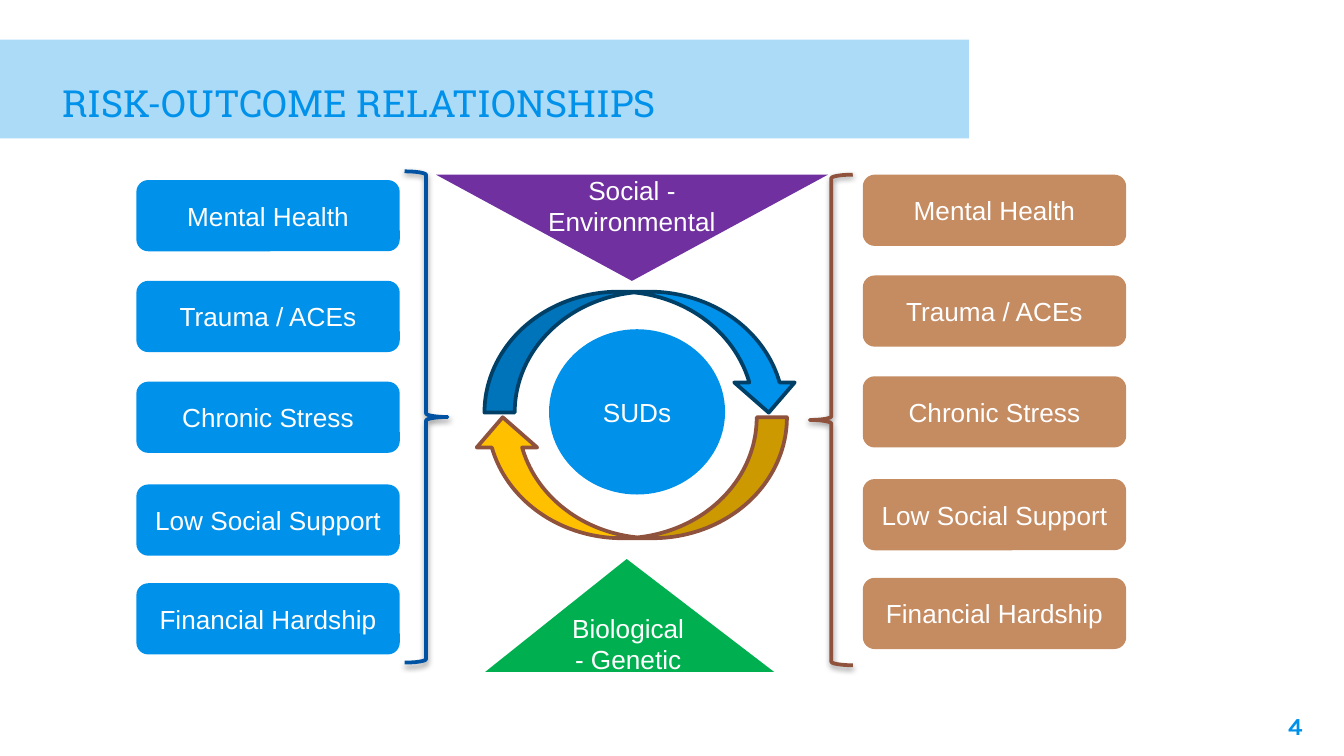
"""Build the risk-outcome relationships slide."""
from dataclasses import dataclass
from typing import Optional

from lxml import etree
from pptx import Presentation
from pptx.dml.color import RGBColor
from pptx.enum.shapes import MSO_SHAPE
from pptx.enum.text import MSO_ANCHOR, PP_ALIGN
from pptx.oxml.ns import qn
from pptx.util import Pt

RECT = MSO_SHAPE.RECTANGLE
ROUND = MSO_SHAPE.ROUNDED_RECTANGLE
OVAL = MSO_SHAPE.OVAL
BRACE = MSO_SHAPE.LEFT_BRACE
PEAK = MSO_SHAPE.ISOSCELES_TRIANGLE
MERGE = MSO_SHAPE.FLOWCHART_MERGE
CURVE = MSO_SHAPE.CURVED_LEFT_ARROW
LEFT, MID, RIGHT = PP_ALIGN.LEFT, PP_ALIGN.CENTER, PP_ALIGN.RIGHT
TOP, CENTER, BASE = MSO_ANCHOR.TOP, MSO_ANCHOR.MIDDLE, MSO_ANCHOR.BOTTOM

SCALE = 4572
COLORS = {
    "blue": "0091EA", "pale": "ACDBF8", "tan": "C58B61", "brown": "8F523D",
    "green": "00B050", "navy": "004067", "gold": "FFC000",
    "purple": "7030A0", "royal": "0053A3", "white": "FFFFFF", "black": "000000",
}
RISKS = {"Mental Health": 0, "Trauma / ACEs": 150, "Chronic Stress": 300,
         "Low Social Support": 453, "Financial Hardship": 600}


@dataclass(frozen=True)
class Label:
    text: str
    size: int = 14
    font: str = "Arial"
    color: str = "white"
    bold: bool = False
    align: PP_ALIGN = MID
    anchor: MSO_ANCHOR = CENTER
    inset: tuple[int, int, int, int] = (20, 10, 20, 10)


@dataclass(frozen=True)
class Item:
    kind: MSO_SHAPE
    box: tuple[int, int, int, int]
    fill: Optional[str] = None
    line: Optional[str] = None
    label: Optional[Label] = None
    turn: int = 0
    adjust: Optional[float] = None
    shade: bool = False


def px(count: int) -> int:
    """Turn px into EMU."""
    return count * SCALE


def rgb(name: str) -> RGBColor:
    """Look up a named colour."""
    return RGBColor.from_string(COLORS[name])


def write(frame, label: Label) -> None:
    """Set a label in a text frame."""
    frame.word_wrap = True
    frame.vertical_anchor = label.anchor
    (frame.margin_left, frame.margin_top,
     frame.margin_right, frame.margin_bottom) = map(px, label.inset)
    para = frame.paragraphs[0]
    para.alignment = label.align
    run = para.add_run()
    run.text = label.text
    font = run.font
    font.name, font.size, font.bold = label.font, Pt(label.size), label.bold
    font.color.rgb = rgb(label.color)


def cast(shape) -> None:
    """Give a shape a soft shadow straight below it."""
    glow = shape._element.spPr.find(qn("a:effectLst"))
    outer = etree.SubElement(
        glow, qn("a:outerShdw"), blurRad=str(Pt(3.1)), dist=str(Pt(1.6)),
        dir="5400000", rotWithShape="0")
    tint = etree.SubElement(outer, qn("a:srgbClr"), val=COLORS["black"])
    etree.SubElement(tint, qn("a:alpha"), val="38000")


def draw(slide, item: Item) -> None:
    """Draw one item on the slide."""
    shape = slide.shapes.add_shape(item.kind, *map(px, item.box))
    shape.shadow.inherit = False
    shape.rotation = item.turn
    if item.adjust is not None:
        shape.adjustments[0] = item.adjust
    if item.fill:
        shape.fill.solid()
        shape.fill.fore_color.rgb = rgb(item.fill)
    else:
        shape.fill.background()
    if item.line:
        shape.line.color.rgb = rgb(item.line)
        shape.line.width = Pt(2)
    else:
        shape.line.fill.background()
    if item.shade:
        cast(shape)
    if item.label:
        write(shape.text_frame, item.label)


def stack(left: int, top: int, fill: str) -> list[Item]:
    """Lay out one column of risks."""
    return [Item(ROUND, (left, top + drop, 392, 106), fill,
                 label=Label(risk)) for risk, drop in RISKS.items()]


def main() -> None:
    """Build and save the slide."""
    deck = Presentation()
    deck.slide_width, deck.slide_height = px(2000), px(1125)
    slide = deck.slides.add_slide(deck.slide_layouts[6])
    page = slide.shapes.add_textbox(*map(px, (1838, 1038, 120, 86)))
    write(page.text_frame, Label("4", 13, "Karla", "blue", True, RIGHT, TOP,
                                 (20, 20, 20, 20)))
    title = Label("RISK-OUTCOME RELATIONSHIPS", 20, "Roboto Slab", "blue",
                  align=LEFT, anchor=BASE, inset=(93, 20, 20, 20))
    items = [
        Item(RECT, (0, 59, 1442, 147), "pale", label=title),
        *stack(203, 268, "blue"),
        *stack(1284, 260, "tan"),
        Item(OVAL, (817, 490, 262, 246), "blue", label=Label("SUDs")),
        Item(BRACE, (1205, 260, 64, 730), line="brown", shade=True),
        Item(PEAK, (722, 832, 430, 168), "green", adjust=0.49,
             label=Label("Biological - Genetic")),
        Item(CURVE, (865, 290, 180, 468), "blue", "navy", turn=270),
        Item(CURVE, (847, 477, 180, 468), "gold", "brown", turn=90),
        Item(MERGE, (649, 260, 583, 158), "purple",
             label=Label("Social - Environmental", inset=(20, 23, 20, 10))),
        Item(BRACE, (602, 255, 64, 731), line="royal", turn=180, shade=True),
    ]
    for item in items:
        draw(slide, item)
    deck.save("out.pptx")


if __name__ == "__main__":
    main()
